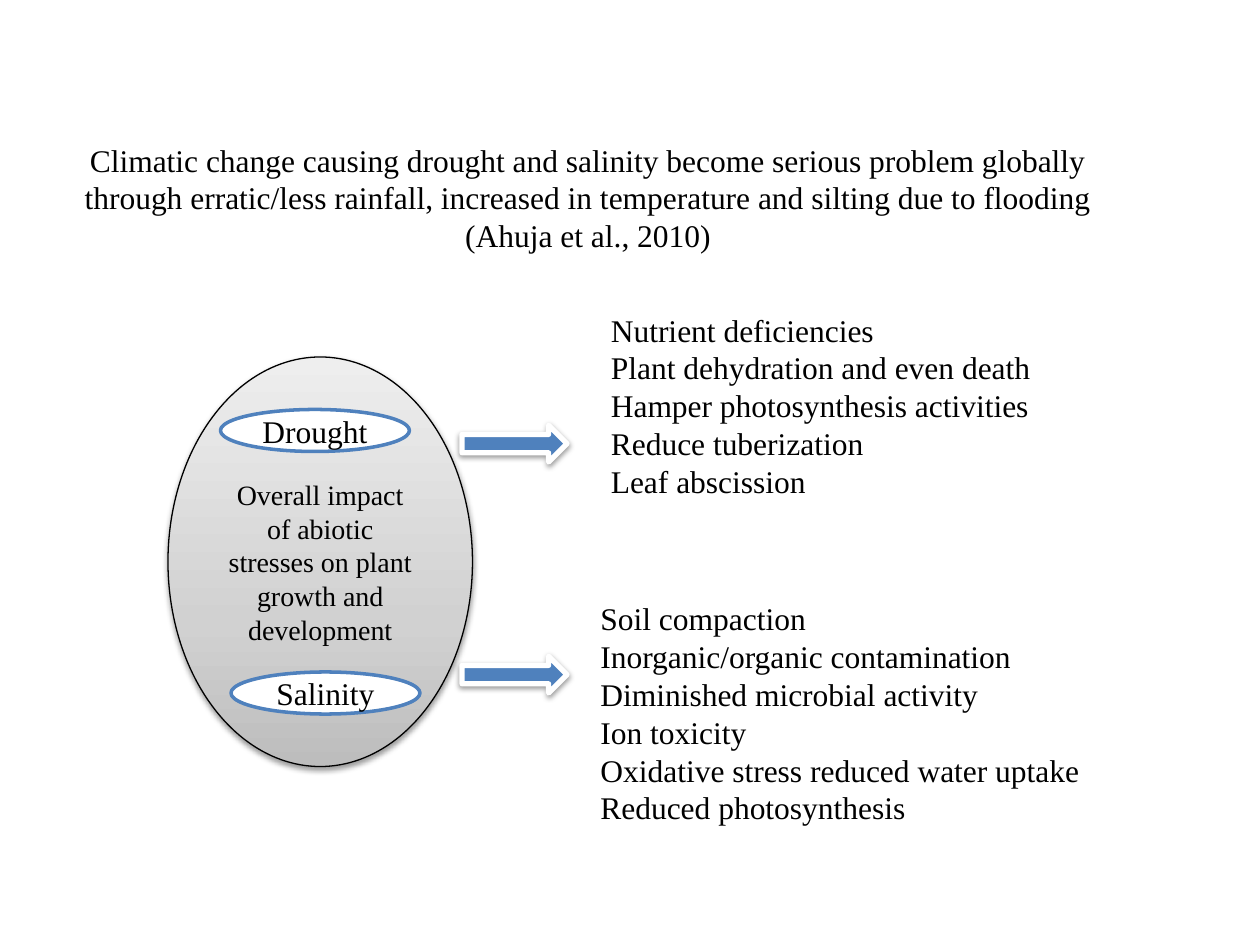
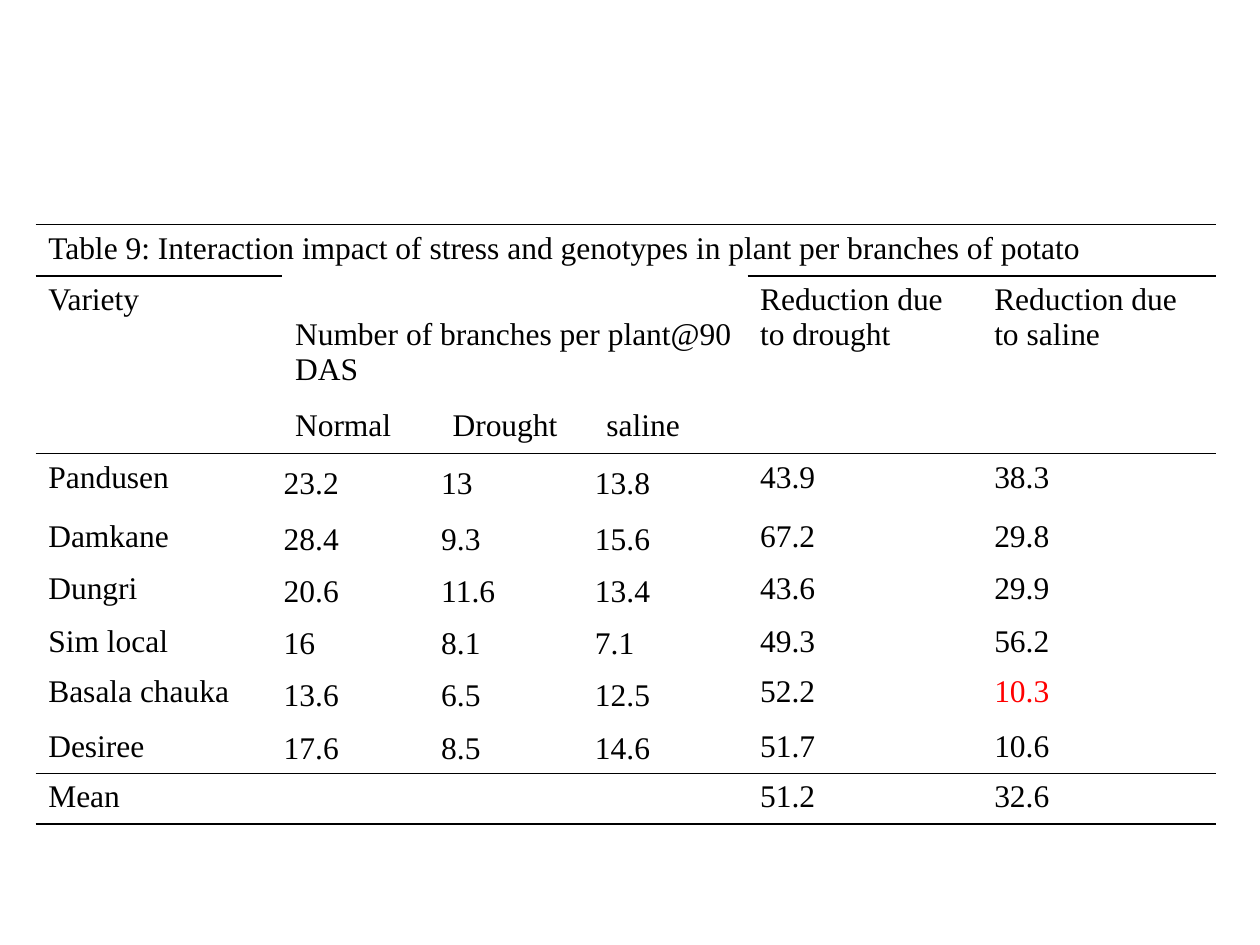
import pptx
import pptx.dml.color
import pptx.enum.shapes
import pptx.enum.text
import pptx.oxml
import pptx.oxml.ns
import pptx.util

RGB = pptx.dml.color.RGBColor
SHAPE = pptx.enum.shapes.MSO_SHAPE
ALIGN = pptx.enum.text.PP_ALIGN
ANCHOR = pptx.enum.text.MSO_ANCHOR
Pt = pptx.util.Pt
Inches = pptx.util.Inches

BLACK = RGB(0x00, 0x00, 0x00)
WHITE = RGB(0xFF, 0xFF, 0xFF)
BLUE = RGB(0x4F, 0x81, 0xBD)
RED = RGB(0xFF, 0x00, 0x00)
GREYS = ((0, RGB(0xBD, 0xBD, 0xBD)), (35, RGB(0xD1, 0xD1, 0xD1)), (100, RGB(0xEE, 0xEE, 0xEE)))
SPACE = pptx.oxml.ns.nsdecls("a")

CAPTION = "Table 9: Interaction impact of stress and genotypes in plant per branches of potato"
ROWS = [
    [CAPTION] + [""] * 5,
    ["Variety", "Number of branches per plant@90 DAS", "", "",
     "Reduction due to drought", "Reduction due to saline"],
    ["", "Normal", "Drought", "saline", "", ""],
    ["Pandusen", "23.2", "13", "13.8", "43.9", "38.3"],
    ["Damkane", "28.4", "9.3", "15.6", "67.2", "29.8"],
    ["Dungri", "20.6", "11.6", "13.4", "43.6", "29.9"],
    ["Sim local", "16", "8.1", "7.1", "49.3", "56.2"],
    ["Basala chauka", "13.6", "6.5", "12.5", "52.2", "10.3"],
    ["Desiree", "17.6", "8.5", "14.6", "51.7", "10.6"],
    ["Mean", "", "", "", "51.2", "32.6"],
]
WIDTHS = [23.5, 15, 14.65, 14.65, 22.3, 22.3]
HEIGHTS = [4.9, 12, 4.9, 5.65, 5, 5, 4.8, 5.2, 4.8, 4.8]
MERGES = [(0, 0, 0, 5), (1, 0, 2, 0), (1, 1, 1, 3), (1, 4, 2, 4), (1, 5, 2, 5)]
FULL = range(6)
RULES = {0: FULL, 1: (0, 4, 5), 3: FULL, 9: FULL, 10: FULL}


class Deck:
    face = "Times New Roman"
    size = 18
    cols, rows = 120, 90

    def __init__(self):
        self.show = pptx.Presentation()
        self.show.slide_width = Inches(10)
        self.show.slide_height = Inches(7.5)

    def page(self):
        self.slide = self.show.slides.add_slide(self.show.slide_layouts[6])

    def wide(self, count):
        return round(self.show.slide_width * count / self.cols)

    def high(self, count):
        return round(self.show.slide_height * count / self.rows)

    def place(self, box):
        left, top, width, height = box
        return self.wide(left), self.high(top), self.wide(width), self.high(height)

    def letter(self, frame, text, align=ALIGN.LEFT, size=None, color=BLACK):
        frame.text = text
        frame.word_wrap = True
        for line in frame.paragraphs:
            line.alignment = align
            line.font.size = Pt(size or self.size)
            for run in line.runs:
                run.font.name = self.face
                run.font.size = Pt(size or self.size)
                run.font.color.rgb = color

    def label(self, box, text, align=ALIGN.LEFT):
        frame = self.slide.shapes.add_textbox(*self.place(box)).text_frame
        self.letter(frame, text, align)
        frame.auto_size = pptx.enum.text.MSO_AUTO_SIZE.SHAPE_TO_FIT_TEXT

    def form(self, kind, box, fill, line, weight):
        shape = self.slide.shapes.add_shape(kind, *self.place(box))
        shape.shadow.inherit = False
        shape.fill.solid()
        shape.fill.fore_color.rgb = fill
        shape.line.color.rgb = line
        shape.line.width = Pt(weight)
        return shape

    def oval(self, box, text, fill=WHITE, line=BLUE, weight=2, size=None):
        shape = self.form(SHAPE.OVAL, box, fill, line, weight)
        self.letter(shape.text_frame, text, ALIGN.CENTER, size)
        shape.text_frame.vertical_anchor = ANCHOR.MIDDLE
        return shape

    def arrow(self, box):
        self.shade(self.form(SHAPE.RIGHT_ARROW, box, BLUE, WHITE, 3))

    def shade(self, shape):
        props = shape.element.spPr
        props.find(pptx.oxml.ns.qn("a:effectLst")).append(pptx.oxml.parse_xml(
            f'<a:outerShdw {SPACE} blurRad="{Pt(3.1)}" dist="{Pt(1.6)}" dir="5400000" rotWithShape="0">'
            f'<a:srgbClr val="{BLACK}"><a:alpha val="38000"/></a:srgbClr></a:outerShdw>'))

    def blend(self, shape, stops):
        props = shape.element.spPr
        marks = "".join(f'<a:gs pos="{spot * 1000}"><a:srgbClr val="{color}"/></a:gs>'
                        for spot, color in stops)
        solid = props.find(pptx.oxml.ns.qn("a:solidFill"))
        props.replace(solid, pptx.oxml.parse_xml(
            f'<a:gradFill {SPACE} rotWithShape="1"><a:gsLst>{marks}</a:gsLst>'
            f'<a:lin ang="16200000" scaled="0"/></a:gradFill>'))

    def edge(self, cell, row, col):
        span = cell.span_height if cell.is_merge_origin else 1
        drawn = {"T": col in RULES.get(row, ()), "B": col in RULES.get(row + span, ())}
        props = cell._tc.get_or_add_tcPr()
        for spot, side in enumerate("LRTB"):
            paint = f'<a:solidFill><a:srgbClr val="{BLACK}"/></a:solidFill>' if drawn.get(side) else "<a:noFill/>"
            props.insert(spot, pptx.oxml.parse_xml(
                f'<a:ln{side} {SPACE} w="{Pt(1)}">{paint}</a:ln{side}>'))

    def grid(self, left, top):
        box = left, top, sum(WIDTHS), sum(HEIGHTS)
        table = self.slide.shapes.add_table(len(ROWS), len(WIDTHS), *self.place(box)).table
        table.first_row = table.horz_banding = False
        for col, width in zip(table.columns, WIDTHS):
            col.width = self.wide(width)
        for row, height in zip(table.rows, HEIGHTS):
            row.height = self.high(height)
        for top, left, bottom, right in MERGES:
            table.cell(top, left).merge(table.cell(bottom, right))
        for row, texts in enumerate(ROWS):
            for col, text in enumerate(texts):
                cell = table.cell(row, col)
                data = row > 2 and col > 0
                color = RED if text == "10.3" else BLACK
                self.letter(cell.text_frame, text, ALIGN.JUSTIFY if data else ALIGN.LEFT, color=color)
                if 2 < row < 9 and 0 < col < 4:
                    cell.vertical_anchor = ANCHOR.MIDDLE
                    cell.margin_left = cell.margin_right = cell.margin_top = Inches(0.01)
                    cell.margin_bottom = 0
                cell.fill.background()
                self.edge(cell, row, col)
        table.cell(1, 1).margin_top = Inches(0.33)


def main():
    deck = Deck()
    deck.page()
    core = deck.oval((16, 34, 29, 39), "Overall impact of abiotic stresses on plant growth and development",
                     line=BLACK, weight=0.75, size=16)
    deck.blend(core, GREYS)
    deck.shade(core)
    deck.oval((21, 39, 18, 4), "Drought")
    deck.oval((22, 64, 18, 4), "Salinity")
    deck.label((3, 12.8, 106, 12.1),
               "Climatic change causing drought and salinity become serious problem globally through "
               "erratic/less rainfall, increased in temperature and silting due to flooding "
               "(Ahuja et al., 2010)", ALIGN.CENTER)
    deck.label((57, 29, 47, 19.4), "\n".join((
        "Nutrient deficiencies", "Plant dehydration and even death",
        "Hamper photosynthesis activities", "Reduce tuberization", "Leaf abscission")))
    deck.label((56, 56.5, 52.2, 23), "\n".join((
        "Soil compaction", "Inorganic/organic contamination", "Diminished microbial activity",
        "Ion toxicity", "Oxidative stress reduced water uptake", "Reduced photosynthesis")))
    for top in (40.5, 62.5):
        deck.arrow((44, top, 10, 3.5))
    deck.page()
    deck.grid(3.4, 21.4)
    deck.show.save("out.pptx")


if __name__ == "__main__":
    main()
